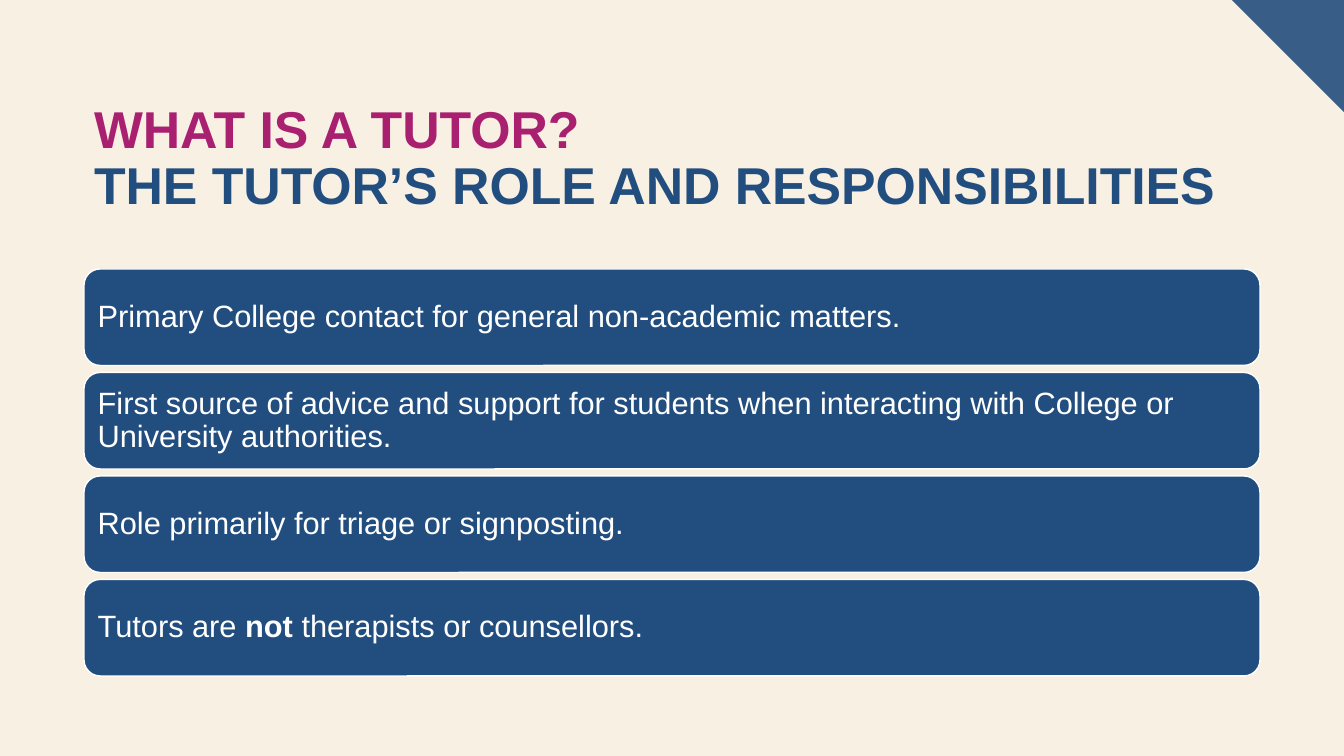
import pptx
import pptx.util
import pptx.dml.color
import pptx.enum.shapes
import pptx.enum.text

PX = 12192000 / 1344
COLORS = {
    "cream": "F8F0E3",
    "corner": "385E88",
    "navy": "224E7F",
    "magenta": "AA2070",
    "white": "FFFFFF",
}
DUTIES = [
    [("Primary College contact for general non-academic matters.", False)],
    [("First source of advice and support for students when interacting "
      "with College or University authorities.", False)],
    [("Role primarily for triage or signposting.", False)],
    [("Tutors are ", False), ("not", True), (" therapists or counsellors.", False)],
]


def px(n):
    return pptx.util.Emu(round(n * PX))


def rgb(name):
    return pptx.dml.color.RGBColor.from_string(COLORS[name])


def add_text(p, text, size, color, bold=False):
    r = p.add_run()
    r.text = text
    r.font.name = "Arial"
    r.font.size = pptx.util.Pt(size)
    r.font.bold = bold
    r.font.color.rgb = rgb(color)


def set_frame(tf, anchor, align, inset_x, inset_y):
    tf.word_wrap = True
    tf.auto_size = pptx.enum.text.MSO_AUTO_SIZE.NONE
    tf.vertical_anchor = anchor
    tf.margin_left = tf.margin_right = px(inset_x)
    tf.margin_top = tf.margin_bottom = px(inset_y)
    p = tf.paragraphs[0]
    p.alignment = align
    p.line_spacing = 0.9
    return p


def add_corner(s, x, y, w, h):
    outline = s.shapes.build_freeform(px(x), px(y))
    outline.add_line_segments([(px(x + w), px(y)), (px(x + w), px(y + h))])
    sp = outline.convert_to_shape()
    sp.shadow.inherit = False
    sp.fill.solid()
    sp.fill.fore_color.rgb = rgb("corner")
    sp.line.fill.background()


def add_title(s, x, y, w, h):
    sp = s.shapes.title
    sp.left, sp.top, sp.width, sp.height = px(x), px(y), px(w), px(h)
    p = set_frame(sp.text_frame, pptx.enum.text.MSO_ANCHOR.TOP,
                  pptx.enum.text.PP_ALIGN.LEFT, 10, 5)
    add_text(p, "WHAT IS A TUTOR?", 37, "magenta", bold=True)
    p.add_line_break()
    add_text(p, "THE TUTOR’S ROLE AND RESPONSIBILITIES", 37, "navy", bold=True)


def add_duties(s, x, y, w, h, gap=7):
    bar_h = (h - gap * (len(DUTIES) - 1)) / len(DUTIES)
    for i, duty in enumerate(DUTIES):
        sp = s.shapes.add_shape(
            pptx.enum.shapes.MSO_SHAPE.ROUNDED_RECTANGLE,
            px(x), px(y + i * (bar_h + gap)), px(w), px(bar_h))
        sp.shadow.inherit = False
        sp.fill.solid()
        sp.fill.fore_color.rgb = rgb("navy")
        sp.line.color.rgb = rgb("white")
        sp.line.width = pptx.util.Pt(1)
        p = set_frame(sp.text_frame, pptx.enum.text.MSO_ANCHOR.MIDDLE,
                      pptx.enum.text.PP_ALIGN.LEFT, 9, 9)
        for text, bold in duty:
            add_text(p, text, 22, "white", bold=bold)


def main():
    prs = pptx.Presentation()
    prs.slide_width, prs.slide_height = px(1344), px(756)
    s = prs.slides.add_slide(prs.slide_layouts[5])
    s.background.fill.solid()
    s.background.fill.fore_color.rgb = rgb("cream")
    add_corner(s, 1232, 0, 112, 112)
    add_title(s, 84, 99, 1176, 147)
    add_duties(s, 84, 269, 1176, 407)
    prs.save("out.pptx")


if __name__ == "__main__":
    main()
